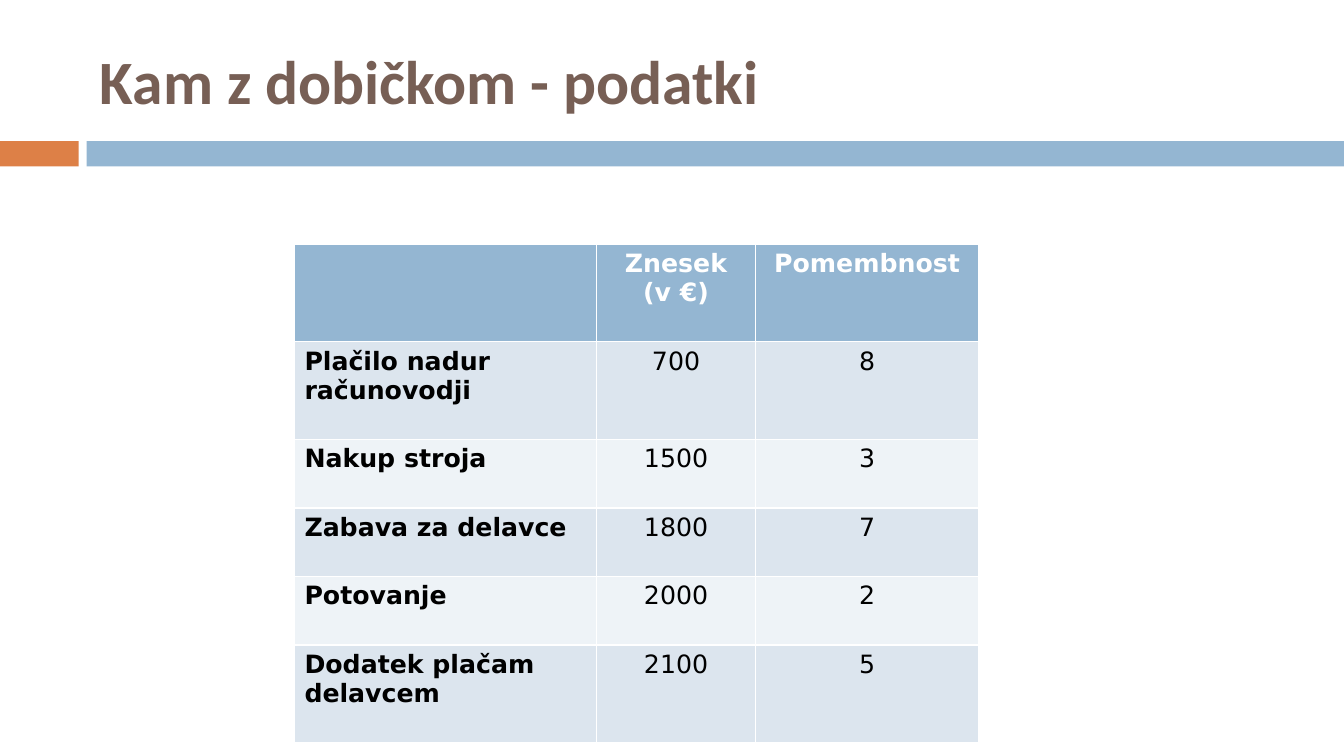
from lxml import etree
from pptx import Presentation
from pptx import util as u
from pptx.dml.color import RGBColor
from pptx.enum import shapes, text
from pptx.oxml.ns import qn

ORANGE = RGBColor(0xDD, 0x80, 0x47)
BLUE = RGBColor(0x94, 0xB6, 0xD2)
BROWN = RGBColor(0x77, 0x5F, 0x55)
BAND_DARK = RGBColor(0xDC, 0xE5, 0xEE)
BAND_LIGHT = RGBColor(0xEE, 0xF3, 0xF7)
WHITE = RGBColor(0xFF, 0xFF, 0xFF)
BLACK = RGBColor(0, 0, 0)

TITLE_FONT = {"name": "Calibri", "size": u.Pt(44), "bold": True}
CELL_FONT = {"name": "DejaVu Sans", "size": u.Pt(18)}

ROWS = [
    ("", "Znesek (v €)", "Pomembnost"),
    ("Plačilo nadur računovodji", "700", "8"),
    ("Nakup stroja", "1500", "3"),
    ("Zabava za delavce", "1800", "7"),
    ("Potovanje", "2000", "2"),
    ("Dodatek plačam delavcem", "2100", "5"),
]
COL_WIDTHS = (3.0, 1.57, 2.22)
ROW_HEIGHTS = (0.97, 0.97, 0.68, 0.68, 0.68, 0.97)


def format_font(font, color, values):
    for name, value in values.items():
        setattr(font, name, value)
    font.color.rgb = color


def add_title(slide, left, top, width, height):
    sp = slide.shapes.title
    box = {"left": left, "top": top, "width": width, "height": height}
    for name, value in box.items():
        setattr(sp, name, u.Inches(value))
    tf = sp.text_frame
    layout = {"auto_size": text.MSO_AUTO_SIZE.NONE, "word_wrap": True,
              "vertical_anchor": text.MSO_ANCHOR.MIDDLE}
    for name, value in layout.items():
        setattr(tf, name, value)
    p = tf.paragraphs[0]
    p.alignment = text.PP_ALIGN.LEFT
    r = p.add_run()
    r.text = "Kam z dobičkom - podatki"
    format_font(r.font, BROWN, TITLE_FONT)


def add_divider(slide, left, top, width, height):
    accent, gap = 0.78, 0.08
    bars = ((left, accent, ORANGE),
            (left + accent + gap, width - accent - gap, BLUE))
    for x, w, color in bars:
        sp = slide.shapes.add_shape(
            shapes.MSO_SHAPE.RECTANGLE,
            *(u.Inches(v) for v in (x, top, w, height)))
        sp.shadow.inherit = False
        sp.fill.solid()
        sp.fill.fore_color.rgb = color
        sp.line.fill.background()


def set_borders(cell, color):
    tc_pr = cell._tc.get_or_add_tcPr()
    for i, side in enumerate(("lnL", "lnR", "lnT", "lnB")):
        ln = etree.Element(qn(f"a:{side}"), w=str(u.Pt(1)))
        fill = etree.SubElement(ln, qn("a:solidFill"))
        etree.SubElement(fill, qn("a:srgbClr"), val=str(color))
        tc_pr.insert(i, ln)


def fill_cell(cell, value, row, col):
    header = row == 0
    cell.fill.solid()
    band = BAND_DARK if row % 2 else BAND_LIGHT
    cell.fill.fore_color.rgb = BLUE if header else band
    set_borders(cell, WHITE)
    p = cell.text_frame.paragraphs[0]
    p.alignment = text.PP_ALIGN.CENTER if col else text.PP_ALIGN.LEFT
    if value:
        r = p.add_run()
        r.text = value
        font = {**CELL_FONT, "bold": header or col == 0}
        format_font(r.font, WHITE if header else BLACK, font)


def add_data_table(slide, left, top):
    box = (left, top, sum(COL_WIDTHS), sum(ROW_HEIGHTS))
    table = slide.shapes.add_table(
        len(ROWS), len(COL_WIDTHS), *(u.Inches(v) for v in box)).table
    for column, width in zip(table.columns, COL_WIDTHS):
        column.width = u.Inches(width)
    for i, (values, height) in enumerate(zip(ROWS, ROW_HEIGHTS)):
        table.rows[i].height = u.Inches(height)
        for j, value in enumerate(values):
            fill_cell(table.cell(i, j), value, i, j)


def main():
    prs = Presentation()
    prs.slide_width, prs.slide_height = u.Inches(13.33), u.Inches(7.5)
    slide = prs.slides.add_slide(prs.slide_layouts.get_by_name("Title Only"))
    add_divider(slide, 0, 1.4, 13.33, 0.25)
    add_title(slide, 0.89, 0.25, 11.89, 1.08)
    add_data_table(slide, 2.92, 2.42)
    prs.save("out.pptx")


if __name__ == "__main__":
    main()
